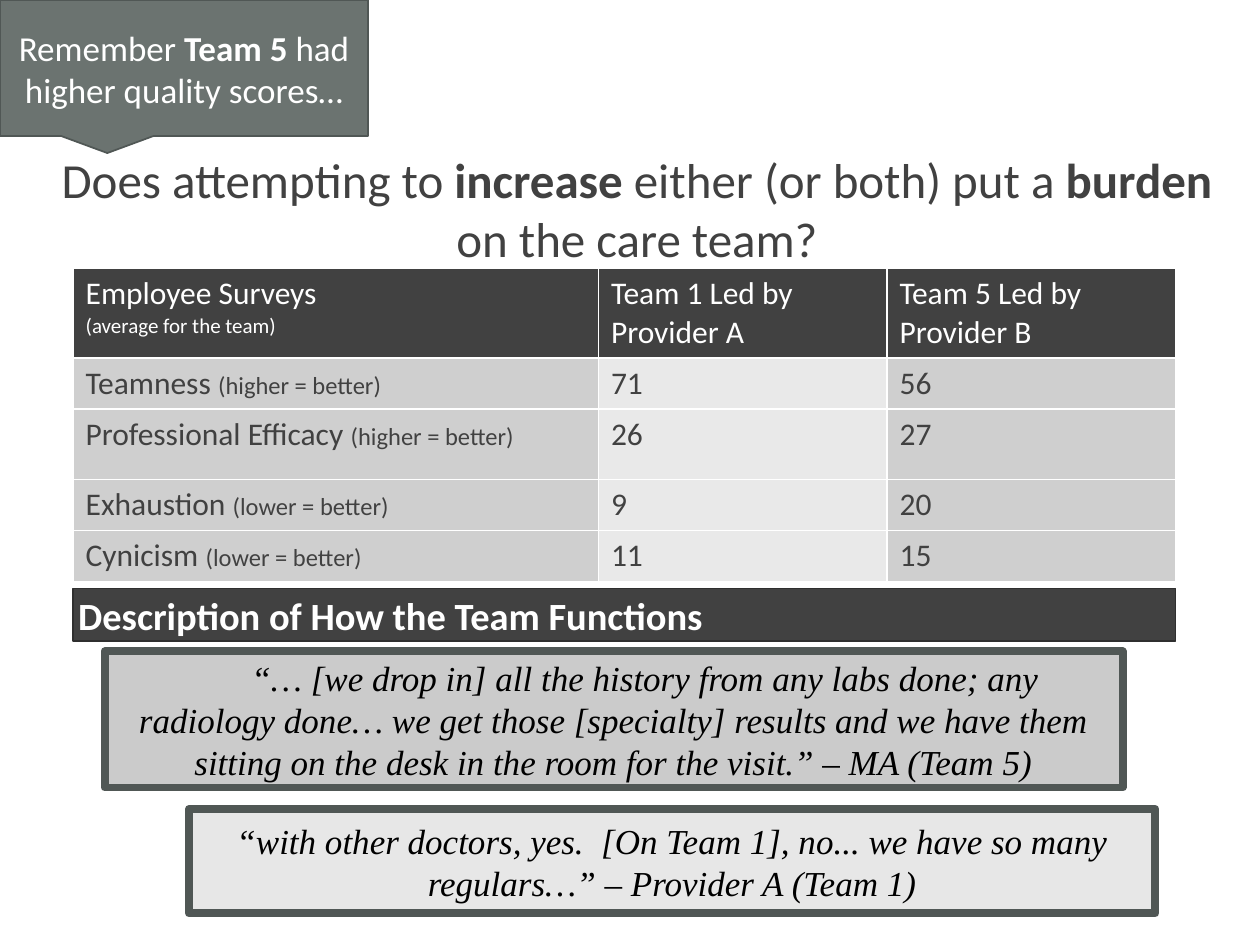
from pptx import Presentation
from pptx.dml.color import RGBColor
from pptx.enum.shapes import MSO_SHAPE as SHAPE
from pptx.enum.text import MSO_ANCHOR as ANCHOR, MSO_AUTO_SIZE as AUTO, PP_ALIGN as ALIGN
from pptx.util import Inches, Pt

DARK = RGBColor(0x41, 0x41, 0x41)
WHITE = RGBColor(0xFF, 0xFF, 0xFF)
BLACK = RGBColor(0, 0, 0)
SLATE = RGBColor(0x6B, 0x73, 0x70)
SLATE_DARK = RGBColor(0x50, 0x57, 0x55)
BAND_LINE = RGBColor(0x2F, 0x2F, 0x2F)
LABEL_GREY = RGBColor(0xCF, 0xCF, 0xCF)
VALUE_GREY = RGBColor(0xE9, 0xE9, 0xE9)
QUOTE_GREY = RGBColor(0xCB, 0xCB, 0xCB)
QUOTE_LIGHT = RGBColor(0xE7, 0xE7, 0xE7)

SANS, SERIF = "Calibri", "Times New Roman"
LEFT, WIDTH = 0.58, 8.75  # shared by the table and the band below it

COL_WIDTHS = (4.17, 2.29, 2.29)
ROW_HEIGHTS = (0.61, 0.35, 0.56, 0.35, 0.35)
HEADERS = ("Employee Surveys", "Team 1 Led by Provider A", "Team 5 Led by Provider B")
SCORES = (
    ("Teamness ", "(higher = better)", 71, 56),
    ("Professional Efficacy ", "(higher = better)", 26, 27),
    ("Exhaustion ", "(lower = better)", 9, 20),
    ("Cynicism ", "(lower = better)", 11, 15),
)


def style(p, size, color, font=SANS, align=None, bold=False, italic=False):
    f = p.font
    f.name, f.size, f.bold, f.italic = font, Pt(size), bold, italic
    f.color.rgb = color
    p.alignment = align


def add_runs(p, *texts):
    """Add runs in turn; every second one is returned for emphasis."""
    runs = []
    for text in texts:
        r = p.add_run()
        r.text = text
        runs.append(r)
    return runs[1::2]


def set_frame(tf, anchor, margin_x, margin_y):
    tf.word_wrap = True
    tf.auto_size = AUTO.NONE
    tf.vertical_anchor = anchor
    tf.margin_left = tf.margin_right = Inches(margin_x)
    tf.margin_top = tf.margin_bottom = Inches(margin_y)


def add_box(slide, box, fill, line, line_width, kind=SHAPE.RECTANGLE, margins=(0.1, 0.05)):
    """Add a filled shape and return its first paragraph."""
    s = slide.shapes.add_shape(kind, *map(Inches, box))
    s.shadow.inherit = False
    s.fill.solid()
    s.fill.fore_color.rgb = fill
    s.line.color.rgb = line
    s.line.width = Pt(line_width)
    set_frame(s.text_frame, ANCHOR.MIDDLE, *margins)
    return s.text_frame.paragraphs[0]


def add_quote(slide, box, fill, text, indent=0):
    p = add_box(slide, box, fill, SLATE_DARK, 4.5)
    p.text = text
    if indent:
        p._p.get_or_add_pPr().set("indent", str(Inches(indent)))
    style(p, 20, BLACK, SERIF, ALIGN.CENTER, italic=True)


def add_title(slide):
    s = slide.shapes.title
    s.left, s.top, s.width, s.height = map(Inches, (0.33, 1.28, 9.45, 0.88))
    set_frame(s.text_frame, ANCHOR.BOTTOM, 0.04, 0.04)
    p = s.text_frame.paragraphs[0]
    style(p, 28, DARK, align=ALIGN.CENTER)
    for r in add_runs(p, "Does attempting to ", "increase", " either (or both) put a ",
                      "burden", " on the care team?"):
        r.font.bold = True


def fill_cell(cell, fill, color, *texts):
    cell.fill.solid()
    cell.fill.fore_color.rgb = fill
    p = cell.text_frame.paragraphs[0]
    style(p, 18, color)
    for r in add_runs(p, *texts):
        r.font.size = Pt(14)


def add_survey_table(slide):
    frame = slide.shapes.add_table(len(ROW_HEIGHTS), len(COL_WIDTHS), Inches(LEFT), Inches(2.13),
                                   Inches(WIDTH), Inches(sum(ROW_HEIGHTS)))
    table = frame.table
    table.horz_banding = False
    for col, width in zip(table.columns, COL_WIDTHS):
        col.width = Inches(width)
    for row, height in zip(table.rows, ROW_HEIGHTS):
        row.height = Inches(height)

    # Header row, with a small note under the first heading
    for c, text in enumerate(HEADERS):
        fill_cell(table.cell(0, c), DARK, WHITE, text)
    note = table.cell(0, 0).text_frame.add_paragraph()
    note.text = "(average for the team)"
    style(note, 12, WHITE)

    # One row per survey scale
    for i, (scale, hint, team_1, team_5) in enumerate(SCORES, 1):
        fill_cell(table.cell(i, 0), LABEL_GREY, DARK, scale, hint)
        fill_cell(table.cell(i, 1), VALUE_GREY, DARK, str(team_1))
        fill_cell(table.cell(i, 2), LABEL_GREY, DARK, str(team_5))


def main():
    prs = Presentation()
    prs.slide_width, prs.slide_height = Inches(10), Inches(7.5)
    slide = prs.slides.add_slide(prs.slide_layouts[5])

    add_title(slide)
    add_survey_table(slide)

    # Section band
    p = add_box(slide, (LEFT, 4.67, WIDTH, 0.42), DARK, BAND_LINE, 1, margins=(0.04, 0.04))
    p.text = "Description of How the Team Functions"
    style(p, 22, WHITE, align=ALIGN.LEFT, bold=True)

    # Quotes from the teams
    add_quote(slide, (0.83, 5.17, 8.08, 1.08), QUOTE_GREY,
              "“… [we drop in] all the history from any labs done; any radiology done… "
              "we get those [specialty] results and we have them sitting on the desk "
              "in the room for the visit.” – MA (Team 5)", indent=0.5)
    add_quote(slide, (1.5, 6.42, 7.67, 0.83), QUOTE_LIGHT,
              "“with other doctors, yes.  [On Team 1], no... we have so many regulars…” "
              "– Provider A (Team 1)")

    # Reminder callout in the corner
    p = add_box(slide, (0, 0, 2.92, 1.08), SLATE, SLATE_DARK, 1, SHAPE.RECTANGULAR_CALLOUT)
    style(p, 20, WHITE, align=ALIGN.CENTER)
    for r in add_runs(p, "Remember ", "Team 5", " had higher quality scores…"):
        r.font.bold = True

    prs.save("out.pptx")


if __name__ == "__main__":
    main()
